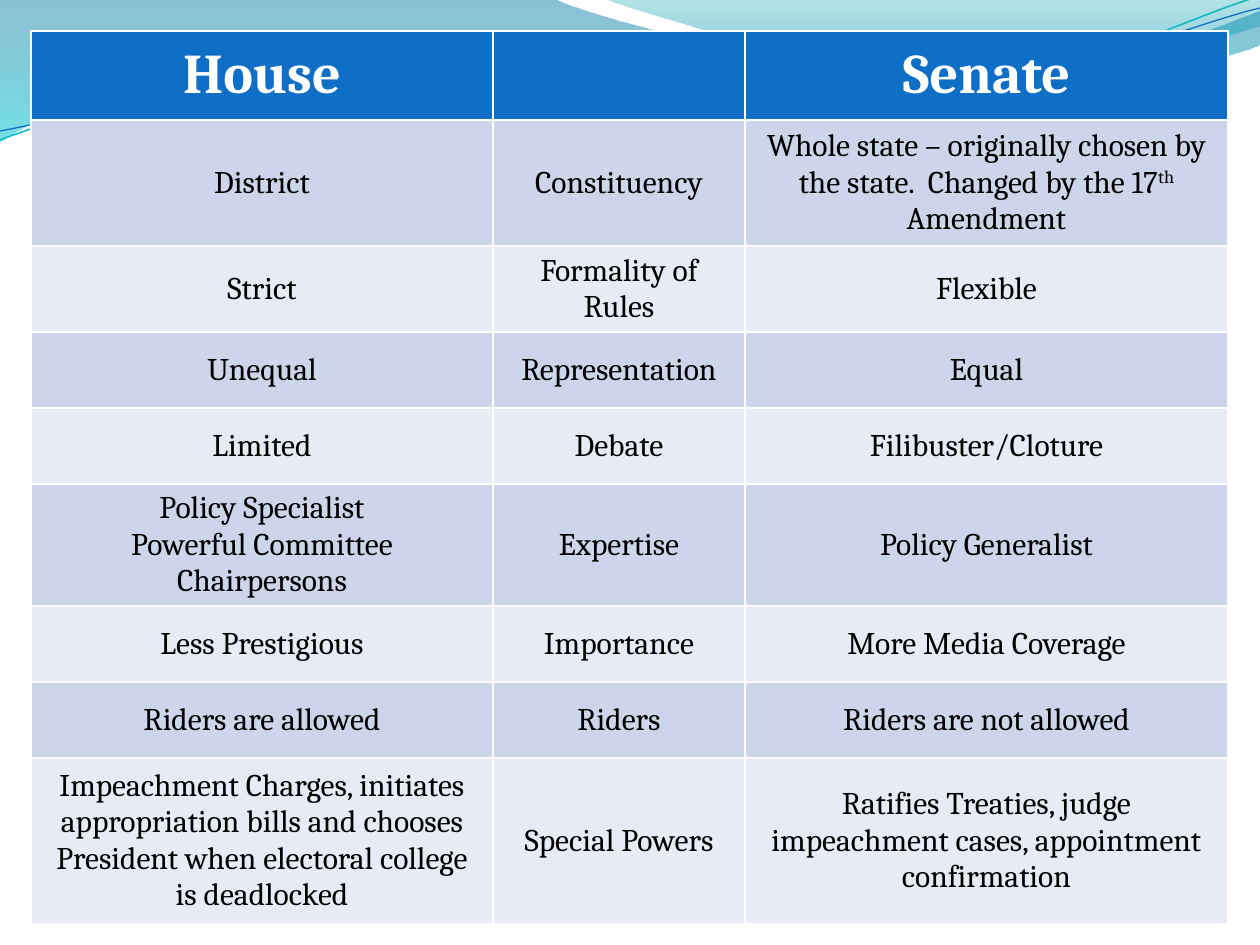
from pptx import Presentation
from pptx.dml.color import RGBColor
from pptx.enum.text import MSO_ANCHOR, PP_ALIGN
from pptx.oxml import parse_xml
from pptx.oxml.ns import nsdecls, qn
from pptx.util import Emu, Pt

EMU_PER_PX = 914400 / 126
FONT = "Cambria"
WHITE = RGBColor(0xFF, 0xFF, 0xFF)
BLACK = RGBColor(0, 0, 0)
BLUE = RGBColor(0x0F, 0x6F, 0xC6)
TEAL = RGBColor(0x0A, 0xB8, 0xBF)
BAND_DARK = RGBColor(0xCC, 0xD5, 0xEA)
BAND_LIGHT = RGBColor(0xE7, 0xEB, 0xF5)
DEEP_BLUE = RGBColor(0x00, 0x74, 0xA1)
CYAN = RGBColor(0x00, 0xC6, 0xCF)
SEA_GREEN = RGBColor(0x00, 0xA1, 0xA9)
SKY_BLUE = RGBColor(0x00, 0x8B, 0xBF)

# Outlines in px: a pair is a straight step, six numbers are a cubic curve
WIDE_WAVE = [(0, -1), (554, -1), (600, 21, 837, 79, 955, 79),
             (1075, 79, 1207, 33, 1260, 11), (1261, 45),
             (1238, 55, 1096, 96, 940, 95), (783, 95, 481, 35, 324, 43),
             (163, 45, 58, 105, -1, 142), (0, -1)]
RIGHT_WAVE = [(604, -1), (641, 14, 859, 78, 969, 82),
              (1079, 87, 1211, 40, 1260, 26), (1260, 0), (604, -1)]
TEAL_LINE = [(0, 140), (60, 117, 199, 72, 349, 66),
             (498, 59, 747, 112, 898, 101), (1050, 89, 1182, 19, 1257, -3)]
BLUE_LINE = [(0, 131), (59, 121, 207, 77, 357, 71),
             (508, 64, 752, 106, 903, 94), (1053, 84, 1186, 26, 1260, 8)]

COLUMNS = [462, 252, 483]
ROW_HEIGHTS = [89, 126, 86, 76, 76, 122, 76, 76, 166]
# A line break starts a paragraph; text between ^ marks is superscript
ROWS = [
    ("House", "", "Senate"),
    ("District", "Constituency",
     "Whole state – originally chosen by the state.  Changed by the 17^th^ Amendment"),
    ("Strict", "Formality of Rules", "Flexible"),
    ("Unequal", "Representation", "Equal"),
    ("Limited", "Debate", "Filibuster/Cloture"),
    ("Policy Specialist\nPowerful Committee Chairpersons", "Expertise",
     "Policy Generalist"),
    ("Less Prestigious", "Importance", "More Media Coverage"),
    ("Riders are allowed", "Riders", "Riders are not allowed"),
    ("Impeachment Charges, initiates appropriation bills and chooses "
     "President when electoral college is deadlocked", "Special Powers",
     "Ratifies Treaties, judge impeachment cases, appointment confirmation"),
]


def px(n):
    return Emu(round(n * EMU_PER_PX))


def add_outline(slide, outline, close):
    """Build the outline through its end points, then bend the curved steps."""
    ends = [(px(part[-2]), px(part[-1])) for part in outline]
    builder = slide.shapes.build_freeform(*ends[0])
    builder.add_line_segments(ends[1:], close=close)
    s = builder.convert_to_shape()
    s.shadow.inherit = False
    steps = list(s._element.iter(qn("a:lnTo")))
    for step, part in zip(steps, outline[1:]):
        if len(part) == 6:
            points = "".join(
                f'<a:pt x="{px(x) - s.left}" y="{px(y) - s.top}"/>'
                for x, y in zip(part[::2], part[1::2]))
            curve = parse_xml(
                f'<a:cubicBezTo {nsdecls("a")}>{points}</a:cubicBezTo>')
            step.getparent().replace(step, curve)
    return s


def add_wave(slide, outline, stops):
    """Add a closed shape with a downward gradient of (position, colour, opacity)."""
    s = add_outline(slide, outline, True)
    s.line.fill.background()
    stops_xml = "".join(
        f'<a:gs pos="{pos * 1000}"><a:srgbClr val="{color}">'
        f'<a:alpha val="{opacity * 1000}"/></a:srgbClr></a:gs>'
        for pos, color, opacity in stops)
    gradient = parse_xml(
        f'<a:gradFill {nsdecls("a")} rotWithShape="1"><a:gsLst>{stops_xml}</a:gsLst>'
        '<a:lin ang="5400000" scaled="0"/></a:gradFill>')
    s._element.spPr.find(qn("a:custGeom")).addnext(gradient)


def add_curve(slide, outline, color, width):
    s = add_outline(slide, outline, False)
    s.fill.background()
    s.line.color.rgb = color
    s.line.width = Pt(width)


def fill_cell(cell, text, header, color):
    cell.fill.solid()
    cell.fill.fore_color.rgb = color
    cell.vertical_anchor = MSO_ANCHOR.MIDDLE
    tf = cell.text_frame
    tf.text = text.replace("^", "")
    for p, line in zip(tf.paragraphs, text.split("\n")):
        p.alignment = PP_ALIGN.CENTER
        if "^" in line:
            p.text = ""
            for i, piece in enumerate(line.split("^")):
                r = p.add_run()
                r.text = piece
                if i % 2:
                    r._r.get_or_add_rPr().set("baseline", "30000")
        for r in p.runs:
            r.font.name = FONT
            r.font.size = Pt(32 if header else 18)
            r.font.bold = header
            r.font.color.rgb = WHITE if header else BLACK


def add_comparison(slide, left, top):
    """Add the table; its style draws the white rules between cells."""
    table = slide.shapes.add_table(
        len(ROWS), len(COLUMNS), px(left), px(top),
        px(sum(COLUMNS)), px(sum(ROW_HEIGHTS))).table
    for column, width in zip(table.columns, COLUMNS):
        column.width = px(width)
    for i, (row, height) in enumerate(zip(table.rows, ROW_HEIGHTS)):
        row.height = px(height)
        band = BLUE if i == 0 else BAND_DARK if i % 2 else BAND_LIGHT
        for cell, text in zip(row.cells, ROWS[i]):
            fill_cell(cell, text, i == 0, band)


def main():
    prs = Presentation()
    prs.slide_width, prs.slide_height = px(1260), px(945)
    slide = prs.slides.add_slide(prs.slide_layouts[6])

    # Waves across the top
    add_wave(slide, WIDE_WAVE, [(0, DEEP_BLUE, 45), (100, CYAN, 55)])
    add_wave(slide, RIGHT_WAVE, [(0, SEA_GREEN, 30), (80, SKY_BLUE, 45)])
    add_curve(slide, TEAL_LINE, TEAL, 0.85)
    add_curve(slide, BLUE_LINE, BLUE, 0.75)

    # House and Senate comparison
    add_comparison(slide, 31, 31)
    prs.save("out.pptx")


if __name__ == "__main__":
    main()
